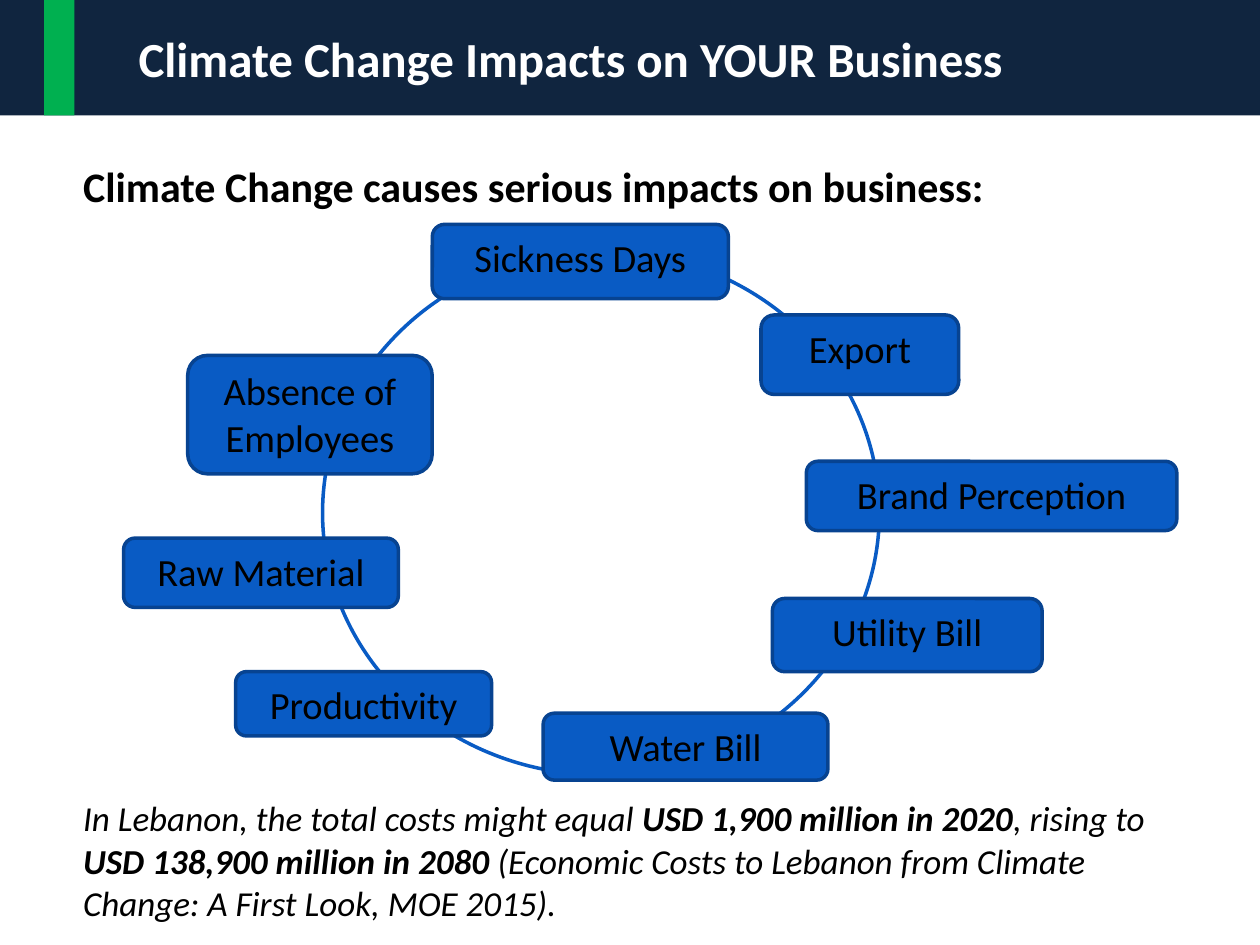
from lxml import etree
from pptx import Presentation
from pptx.dml.color import RGBColor
from pptx.enum.shapes import MSO_SHAPE as Shape
from pptx.enum.text import MSO_ANCHOR as Anchor, MSO_AUTO_SIZE as AutoSize, PP_ALIGN as Align
from pptx.oxml.ns import qn
from pptx.util import Pt

NAVY = RGBColor(0x10, 0x25, 0x3F)
GREEN = RGBColor(0x00, 0xB0, 0x50)
BLUE = RGBColor(0x09, 0x5B, 0xC4)
DARK_BLUE = RGBColor(0x07, 0x43, 0x91)
WHITE = RGBColor(0xFF, 0xFF, 0xFF)
BLACK = RGBColor(0x00, 0x00, 0x00)
FONT = "Calibri"

IMPACTS = [
    ("Raw Material", (0, 179.3, 157, 39.6)),
    ("Absence of Employees", (36.7, 74.9, 139.7, 67.7)),
    ("Sickness Days", (176.4, 0, 169.2, 42.5)),
    ("Utility Bill", (370.8, 213.8, 154.1, 41.8)),
    ("Water Bill", (239.8, 279.4, 162.7, 38.2)),
    ("Brand Perception", (390.2, 135.4, 211.7, 39.6)),
    ("Export", (364.3, 51.8, 113, 45.4)),
    ("Productivity", (64.1, 255.6, 146.2, 36.7)),
]
COSTS = [
    ("In Lebanon, the total costs might equal ", False),
    ("USD 1,900 million in 2020", True),
    (", rising to ", False),
    ("USD 138,900 million in 2080 ", True),
    ("(Economic Costs to Lebanon from Climate Change: A First Look, MOE 2015).", False),
]


def place(part, left, top, width, height):
    part.left, part.top = Pt(left), Pt(top)
    part.width, part.height = Pt(width), Pt(height)


def add_part(slide, kind, left, top, width, height, fill=None, line=None):
    part = slide.shapes.add_shape(kind, Pt(left), Pt(top), Pt(width), Pt(height))
    part.shadow.inherit = False
    if fill is None:
        part.fill.background()
    else:
        part.fill.solid()
        part.fill.fore_color.rgb = fill
    if line is None:
        part.line.fill.background()
    else:
        part.line.color.rgb = line
        part.line.width = Pt(2)
    return part


def add_run(paragraph, text, size, color=BLACK, bold=False, italic=False):
    run = paragraph.add_run()
    run.text = text
    font = run.font
    font.name, font.size, font.bold, font.italic = FONT, Pt(size), bold, italic
    font.color.rgb = color


def plain_paragraph(paragraph, space_before):
    properties = paragraph._p.get_or_add_pPr()
    properties.set("marL", "0")
    properties.set("indent", "0")
    paragraph.space_before = Pt(space_before)
    etree.SubElement(properties, qn("a:buNone"))


def build_body(body, left, top, width, height):
    place(body, left, top, width, height)
    frame = body.text_frame
    frame.word_wrap = True
    frame.auto_size = AutoSize.NONE
    frame.vertical_anchor = Anchor.TOP
    frame.margin_left = frame.margin_right = Pt(5)
    frame.margin_top = frame.margin_bottom = Pt(3)
    heading = frame.paragraphs[0]
    plain_paragraph(heading, 0)
    add_run(heading, "Climate Change causes serious impacts on business:", 24, bold=True)
    costs = frame.add_paragraph()
    plain_paragraph(costs, 335)
    for text, bold in COSTS:
        add_run(costs, text, 20, bold=bold, italic=True)


def build_header(slide, left, top, width, height):
    title = slide.shapes.title
    place(title, left, top, width, height)
    title.fill.solid()
    title.fill.fore_color.rgb = NAVY
    frame = title.text_frame
    frame.word_wrap = True
    frame.auto_size = AutoSize.NONE
    frame.vertical_anchor = Anchor.MIDDLE
    frame.margin_left = Pt(79.2)
    heading = frame.paragraphs[0]
    heading.alignment = Align.LEFT
    add_run(heading, "Climate Change Impacts on YOUR Business", 28, WHITE, bold=True)
    add_part(slide, Shape.RECTANGLE, left + 25.2, top, 17.3, height, GREEN)


def build_cycle(slide, left, top):
    add_part(slide, Shape.OVAL, left + 113.7, top + 15.1, 318.2, 299.5, line=BLUE)
    for label, (x, y, width, height) in IMPACTS:
        impact = add_part(slide, Shape.ROUNDED_RECTANGLE, left + x, top + y,
                          width, height, BLUE, DARK_BLUE)
        frame = impact.text_frame
        frame.word_wrap = True
        frame.vertical_anchor = Anchor.TOP
        paragraph = frame.paragraphs[0]
        paragraph.alignment = Align.CENTER
        add_run(paragraph, label, 22)


def main():
    deck = Presentation()
    deck.slide_width, deck.slide_height = Pt(720), Pt(540)
    slide = deck.slides.add_slide(deck.slide_layouts[1])
    build_body(slide.placeholders[1], 42.5, 88.6, 646.6, 446.4)
    build_header(slide, 0, 0, 720, 66)
    build_cycle(slide, 70.6, 128.2)
    deck.save("out.pptx")


if __name__ == "__main__":
    main()
